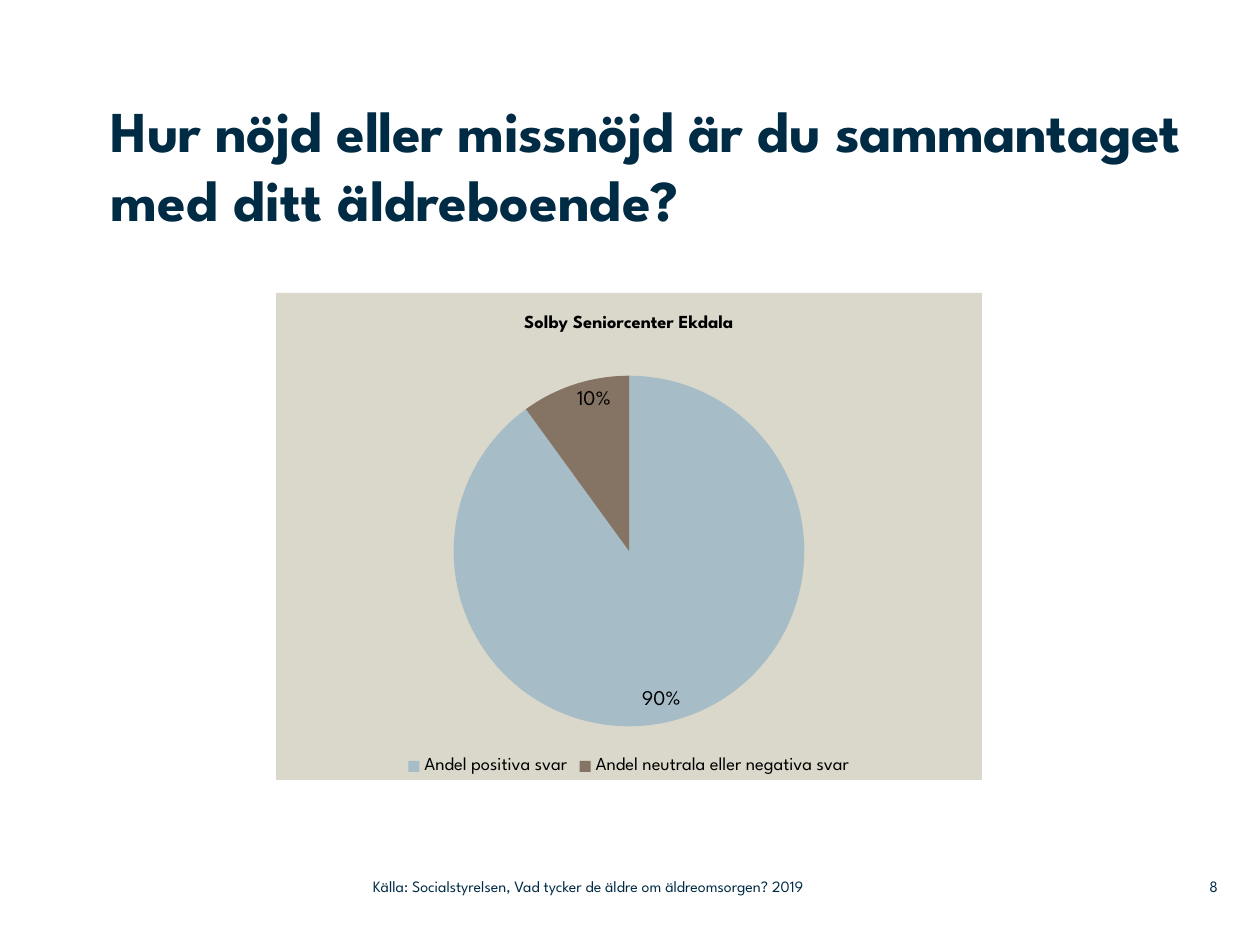
"""Build a slide with a pie chart of overall satisfaction with a care home."""
from dataclasses import dataclass

from lxml import etree
from pptx import Presentation
from pptx import util as u
from pptx.chart.data import CategoryChartData
from pptx.dml.color import RGBColor
from pptx.enum import chart as charts
from pptx.enum import text
from pptx.oxml.ns import qn

PX = u.Inches(1) // 126
FONT = "League Spartan"
COLORS = {"navy": "002B45", "black": "000000", "panel": "DAD7CB",
          "positive": "A6BCC6", "negative": "857363"}
ANSWERS = {"Andel positiva svar": (90, "positive"),
           "Andel neutrala eller negativa svar": (10, "negative")}
PIE_LAYOUT = {"x": 0.25, "y": 0.17, "w": 0.5, "h": 0.72}


@dataclass
class Label:
    runs: dict[str, int]
    left: int
    top: int
    width: int
    height: int
    size: float = 9
    bold: bool = False
    align: text.PP_ALIGN = text.PP_ALIGN.LEFT
    anchor: text.MSO_ANCHOR = text.MSO_ANCHOR.MIDDLE


LABELS = [
    Label({"8": 0}, 1159, 868, 59, 37, align=text.PP_ALIGN.RIGHT),
    Label({"Källa: Socialstyrelsen, Vad tycker de äldre om äldreomsorgen? 2019": 0},
          373, 868, 558, 37),
    Label({"Hur nöjd eller missnöjd är du sammantaget ": -30, "med ditt äldreboende?": 0},
          111, 95, 1113, 179, 33, True, anchor=text.MSO_ANCHOR.TOP),
]


def style_font(font, size: float, color: str, bold: bool = False) -> None:
    font.name, font.size, font.bold = FONT, u.Pt(size), bold
    font.color.rgb = RGBColor.from_string(COLORS[color])


def paint(fill, color: str) -> None:
    fill.solid()
    fill.fore_color.rgb = RGBColor.from_string(COLORS[color])


def add_label(slide, label: Label) -> None:
    shape = slide.shapes.add_textbox(
        *(n * PX for n in (label.left, label.top, label.width, label.height)))
    frame = shape.text_frame
    frame.word_wrap = True
    frame.vertical_anchor = label.anchor
    frame.margin_left = frame.margin_right = frame.margin_top = frame.margin_bottom = 0
    paragraph = frame.paragraphs[0]
    paragraph.alignment = label.align
    style_font(paragraph.font, label.size, "navy", label.bold)
    for words, spacing in label.runs.items():
        run = paragraph.add_run()
        run.text = words
        if spacing:
            run.font._element.set("spc", str(spacing))


def place_plot(chart) -> None:
    plot_area = chart._chartSpace.find(qn("c:chart")).find(qn("c:plotArea"))
    for old in plot_area.findall(qn("c:layout")):
        plot_area.remove(old)
    layout = etree.Element(qn("c:layout"))
    manual = etree.SubElement(layout, qn("c:manualLayout"))
    settings = {"layoutTarget": "inner", "xMode": "edge", "yMode": "edge"} | PIE_LAYOUT
    for name, value in settings.items():
        etree.SubElement(manual, qn(f"c:{name}"), val=str(value))
    plot_area.insert(0, layout)


def add_pie(slide, left: int, top: int, width: int, height: int) -> None:
    data = CategoryChartData()
    data.categories = list(ANSWERS)
    data.add_series("Series 1", [value for value, _ in ANSWERS.values()])
    chart = slide.shapes.add_chart(
        charts.XL_CHART_TYPE.PIE, *(n * PX for n in (left, top, width, height)), data).chart
    style_font(chart.font, 18, "black")
    place_plot(chart)

    chart.has_title = True
    paragraph = chart.chart_title.text_frame.paragraphs[0]
    paragraph.text = "Solby Seniorcenter Ekdala"
    style_font(paragraph.font, 10.5, "black", True)

    chart.has_legend = True
    chart.legend.position = charts.XL_LEGEND_POSITION.BOTTOM
    chart.legend.include_in_layout = False
    style_font(chart.legend.font, 10.5, "black")

    plot = chart.plots[0]
    plot.vary_by_categories = True
    for index, (_, color) in enumerate(ANSWERS.values()):
        paint(plot.series[0].points[index].format.fill, color)
    plot.has_data_labels = True
    labels = plot.data_labels
    labels.show_percentage, labels.show_value = True, False
    labels.number_format, labels.number_format_is_linked = "0%", False
    labels.position = charts.XL_LABEL_POSITION.INSIDE_END
    style_font(labels.font, 12, "black")

    panel = etree.Element(qn("c:spPr"))
    fill = etree.SubElement(panel, qn("a:solidFill"))
    etree.SubElement(fill, qn("a:srgbClr"), val=COLORS["panel"])
    line = etree.SubElement(panel, qn("a:ln"))
    etree.SubElement(line, qn("a:noFill"))
    chart._chartSpace.find(qn("c:chart")).addnext(panel)


def main() -> None:
    presentation = Presentation()
    presentation.slide_width, presentation.slide_height = u.Inches(10), u.Inches(7.5)
    slide = presentation.slides.add_slide(presentation.slide_layouts[6])
    for label in LABELS:
        add_label(slide, label)
    add_pie(slide, 276, 293, 706, 487)
    presentation.save("out.pptx")


if __name__ == "__main__":
    main()
